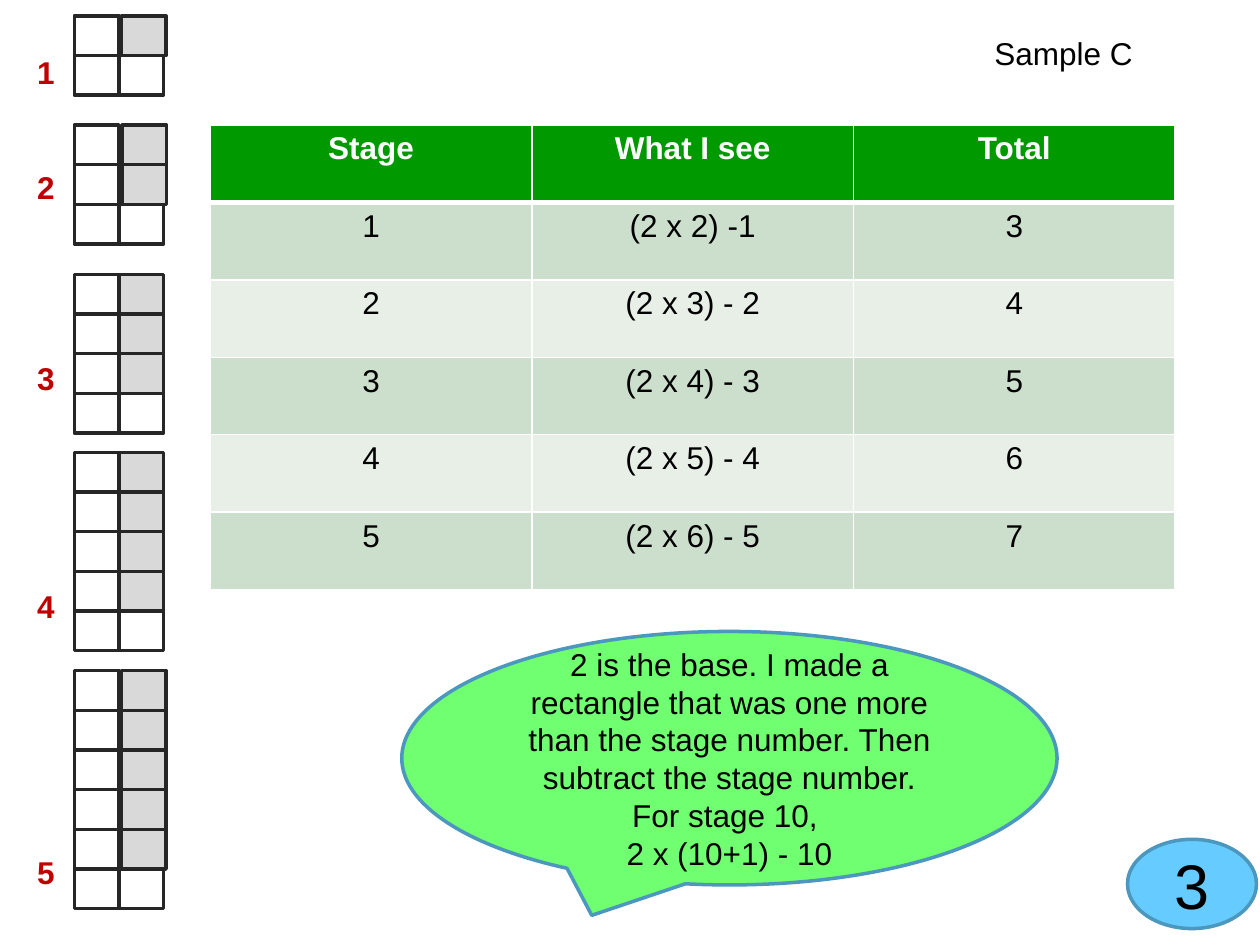
from lxml.etree import SubElement
from pptx import Presentation
from pptx.dml.color import RGBColor
from pptx.enum.shapes import MSO_SHAPE as Shape
from pptx.enum.text import MSO_ANCHOR as Anchor, MSO_AUTO_SIZE as AutoSize, PP_ALIGN as Align
from pptx.oxml.ns import qn
from pptx.util import Cm, Pt

THEME = {
    "font": "Arial", "body": 18, "page": 36,
    "ink": "000000", "white": "FFFFFF", "label": "C00000",
    "grid": "262626", "shaded": "D9D9D9",
    "header": "009900", "bands": ("CCDECC", "E7EFE7"),
    "outline": "4B97BD", "bubble": "70FF70", "badge": "66CCFF",
}

# Content
TITLE = "Sample C"
PAGE = "3"
TABLE = [
    ("Stage", "What I see", "Total"),
    ("1", "(2 x 2) -1", "3"),
    ("2", "(2 x 3) - 2", "4"),
    ("3", "(2 x 4) - 3", "5"),
    ("4", "(2 x 5) - 4", "6"),
    ("5", "(2 x 6) - 5", "7"),
]
EXPLANATION = [
    "2 is the base. I made a rectangle that was one more than the stage number. "
    "Then subtract the stage number.",
    "For stage 10, ",
    "2 x (10+1) - 10",
]
# Stage label, top of its figure (cm), shift of the shaded column (cm), space above the label (pt)
STAGES = [
    ("1", 0.32, 0.05, 0),
    ("2", 2.52, 0.06, 44.4),
    ("3", 5.53, 0, 87.3),
    ("4", 9.12, 0, 109),
    ("5", 13.52, 0.05, 130.2),
]
SQUARE_LEFT, SQUARE_WIDTH, SQUARE_HEIGHT = 1.5, 0.9, 0.8


def color(name):
    return RGBColor.from_string(THEME.get(name, name))


def write(frame, lines, size="body", ink="ink", bold=False, align=Align.CENTER, gaps=None):
    for index, line in enumerate(lines):
        paragraph = frame.paragraphs[0] if index == 0 else frame.add_paragraph()
        paragraph.alignment = align
        if gaps:
            paragraph.space_before = Pt(gaps[index])
        run = paragraph.add_run()
        run.text = line
        run.font.name = THEME["font"]
        run.font.size = Pt(THEME[size])
        run.font.bold = bold
        run.font.color.rgb = color(ink)


def add_shape(slide, kind, box, fill, line):
    shape = slide.shapes.add_shape(kind, *map(Cm, box))
    shape.shadow.inherit = False
    if fill:
        shape.fill.solid()
        shape.fill.fore_color.rgb = color(fill)
    else:
        shape.fill.background()
    shape.line.color.rgb = color(line)
    shape.line.width = Pt(2)
    shape.text_frame.vertical_anchor = Anchor.MIDDLE
    return shape


def set_borders(cell, widths):
    properties = cell._tc.get_or_add_tcPr()
    for position, (side, width) in enumerate(widths.items()):
        line = properties.makeelement(qn(f"a:ln{side}"), {"w": str(Pt(width))})
        fill = SubElement(line, qn("a:solidFill"))
        SubElement(fill, qn("a:srgbClr"), val=THEME["white"])
        properties.insert(position, line)


def add_title(slide):
    title = slide.shapes.title
    title.left, title.top, title.width, title.height = map(Cm, (19.79, 0.56, 3.33, 1.02))
    frame = title.text_frame
    frame.word_wrap = False
    frame.auto_size = AutoSize.SHAPE_TO_FIT_TEXT
    frame.vertical_anchor = Anchor.TOP
    write(frame, [TITLE], align=Align.LEFT)


def add_figures(slide):
    # Each stage has one row more than its number; all but the last row are shaded
    for stage, (_, top, shift, _) in enumerate(STAGES, 1):
        for column in range(2):
            for row in range(stage + 1):
                shaded = column == 1 and row < stage
                left = SQUARE_LEFT + column * SQUARE_WIDTH + (shift if shaded else 0)
                box = (left, top + row * SQUARE_HEIGHT, SQUARE_WIDTH, SQUARE_HEIGHT)
                add_shape(slide, Shape.RECTANGLE, box, "shaded" if shaded else None, "grid")


def add_labels(slide):
    frame = slide.shapes.add_textbox(*map(Cm, (0.5, 0.94, 0.86, 17.2))).text_frame
    frame.word_wrap = False
    write(frame, [stage[0] for stage in STAGES], ink="label", bold=True,
          align=Align.LEFT, gaps=[stage[3] for stage in STAGES])


def add_stage_table(slide):
    rows, columns = len(TABLE), len(TABLE[0])
    box = map(Cm, (4.24, 2.52, 19.45, 9.37))
    table = slide.shapes.add_table(rows, columns, *box).table
    for r, values in enumerate(TABLE):
        header = r == 0
        for c, value in enumerate(values):
            cell = table.cell(r, c)
            cell.fill.solid()
            cell.fill.fore_color.rgb = color("header" if header else THEME["bands"][(r - 1) % 2])
            write(cell.text_frame, [value], ink="white" if header else "ink", bold=header)
            set_borders(cell, {"L": 1, "R": 1, "T": 3 if r == 1 else 1, "B": 3 if header else 1})


def add_bubble(slide):
    bubble = add_shape(slide, Shape.OVAL_CALLOUT, (8.1, 12.73, 13.21, 5.11), "bubble", "outline")
    bubble.adjustments[0], bubble.adjustments[1] = -0.21, 0.62
    bubble.text_frame.word_wrap = True
    write(bubble.text_frame, EXPLANATION)


def add_badge(slide):
    badge = add_shape(slide, Shape.OVAL, (22.73, 16.92, 2.6, 1.8), "badge", "outline")
    write(badge.text_frame, [PAGE], size="page")


def main():
    presentation = Presentation()
    presentation.slide_width, presentation.slide_height = Cm(25.4), Cm(19.05)
    slide = presentation.slides.add_slide(presentation.slide_layouts[5])
    add_title(slide)
    add_badge(slide)
    add_figures(slide)
    add_labels(slide)
    add_stage_table(slide)
    add_bubble(slide)
    presentation.save("out.pptx")


if __name__ == "__main__":
    main()
